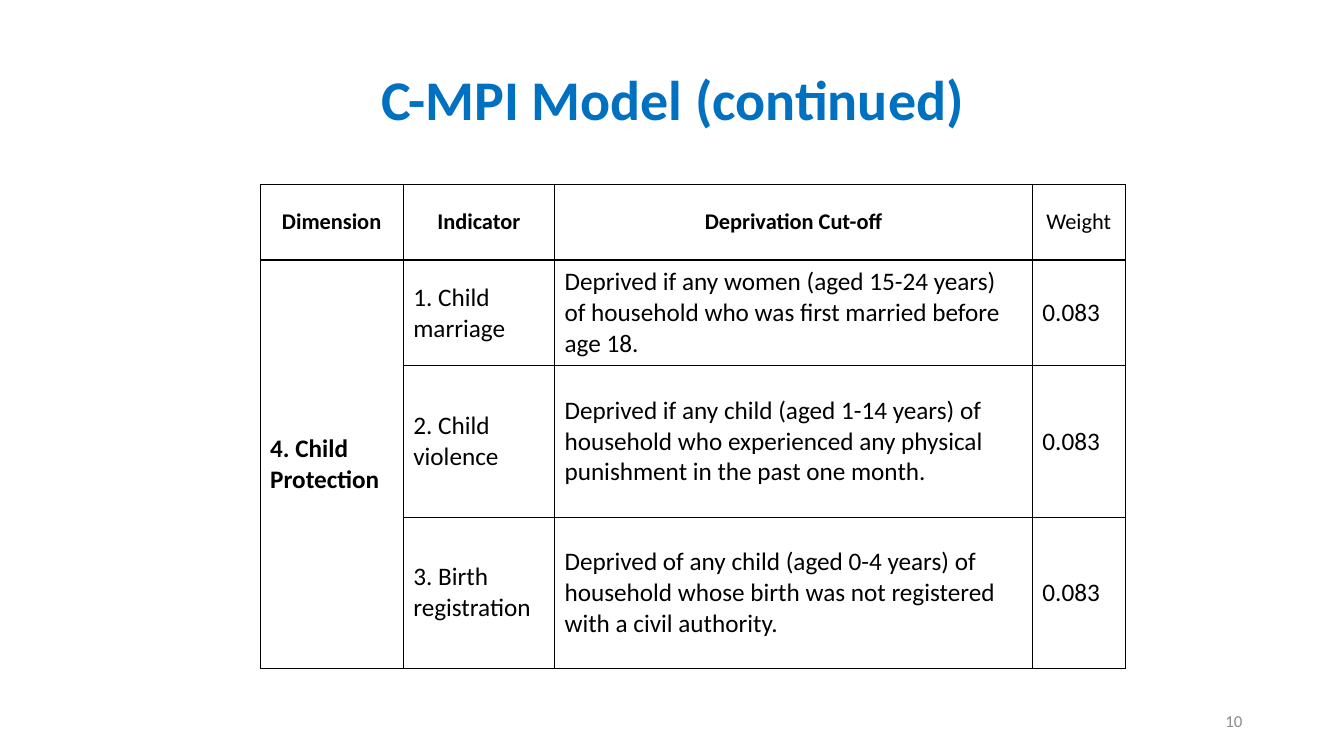
import lxml.etree
import pptx
import pptx.dml.color
import pptx.enum.text
import pptx.oxml.ns
import pptx.util

Inches = pptx.util.Inches
Pt = pptx.util.Pt
RGBColor = pptx.dml.color.RGBColor
PP_ALIGN = pptx.enum.text.PP_ALIGN
MIDDLE = pptx.enum.text.MSO_ANCHOR.MIDDLE
qn = pptx.oxml.ns.qn

BLUE = RGBColor(0x00, 0x70, 0xC0)
BLACK = RGBColor(0x00, 0x00, 0x00)
WHITE = RGBColor(0xFF, 0xFF, 0xFF)
GRAY = RGBColor(0x8C, 0x8C, 0x8C)
FONT = "Calibri"

COLUMN_WIDTHS = [1.42, 1.5, 4.74, 0.92]
ROW_HEIGHTS = [0.75, 1.05, 1.5, 1.5]
HEADERS = ["Dimension", "Indicator", "Deprivation Cut-off", "Weight"]
DIMENSION = "4. Child Protection"
INDICATORS = [
    ("1. Child marriage",
     "Deprived if any women (aged 15-24 years) of household who was first "
     "married before age 18.", "0.083"),
    ("2. Child violence",
     "Deprived if any child (aged 1-14 years) of household who experienced any "
     "physical punishment in the past one month.", "0.083"),
    ("3. Birth registration",
     "Deprived of any child (aged 0-4 years) of household whose birth was not "
     "registered with a civil authority.", "0.083"),
]


def write(tf, text, size, color, bold=False, align=PP_ALIGN.LEFT):
    tf.word_wrap = True
    tf.vertical_anchor = MIDDLE
    p = tf.paragraphs[0]
    p.alignment = align
    r = p.add_run()
    r.text = text
    r.font.name = FONT
    r.font.size = Pt(size)
    r.font.bold = bold
    r.font.color.rgb = color
    return p


def place(shape, left, top, width, height):
    shape.left, shape.top = Inches(left), Inches(top)
    shape.width, shape.height = Inches(width), Inches(height)


def add_title(s, text):
    title = s.shapes.title
    place(title, 2.11, 0.5, 9.13, 1.04)
    p = write(title.text_frame, text, 40, BLUE, True, PP_ALIGN.CENTER)
    p.line_spacing = 0.9


def style_cell(cell):
    """Give the cell a white fill and thin black borders."""
    cell.fill.solid()
    cell.fill.fore_color.rgb = WHITE
    tc_pr = cell._tc.get_or_add_tcPr()
    for i, side in enumerate(("lnL", "lnR", "lnT", "lnB")):
        line = lxml.etree.Element(qn("a:" + side), w=str(Pt(1)))
        fill = lxml.etree.SubElement(line, qn("a:solidFill"))
        lxml.etree.SubElement(fill, qn("a:srgbClr"), val=str(BLACK))
        tc_pr.insert(i, line)


def fill_cell(cell, text, size, bold=False, align=PP_ALIGN.LEFT):
    write(cell.text_frame, text, size, BLACK, bold, align)
    cell.vertical_anchor = MIDDLE


def add_indicator_table(s):
    table = s.shapes.add_table(
        len(ROW_HEIGHTS), len(COLUMN_WIDTHS), Inches(2.58), Inches(1.83),
        Inches(sum(COLUMN_WIDTHS)), Inches(sum(ROW_HEIGHTS))).table
    for column, width in zip(table.columns, COLUMN_WIDTHS):
        column.width = Inches(width)
    for row, height in zip(table.rows, ROW_HEIGHTS):
        row.height = Inches(height)
    for cell in table.iter_cells():
        style_cell(cell)

    for col, header in enumerate(HEADERS):
        fill_cell(table.cell(0, col), header, 16, header != "Weight",
                  PP_ALIGN.CENTER)
    dimension = table.cell(1, 0)
    dimension.merge(table.cell(len(INDICATORS), 0))
    fill_cell(dimension, DIMENSION, 18, True)
    for row, indicator in enumerate(INDICATORS, 1):
        for col, text in enumerate(indicator, 1):
            fill_cell(table.cell(row, col), text, 18)


def add_page_number(s, number):
    box = s.shapes.add_textbox(Inches(9.42), Inches(6.95), Inches(3), Inches(0.4))
    write(box.text_frame, number, 12, GRAY, align=PP_ALIGN.RIGHT)


def main():
    prs = pptx.Presentation()
    prs.slide_width, prs.slide_height = Inches(13.33), Inches(7.5)
    s = prs.slides.add_slide(prs.slide_layouts[5])
    add_title(s, "C-MPI Model (continued)")
    add_indicator_table(s)
    add_page_number(s, "10")
    prs.save("out.pptx")


if __name__ == "__main__":
    main()
